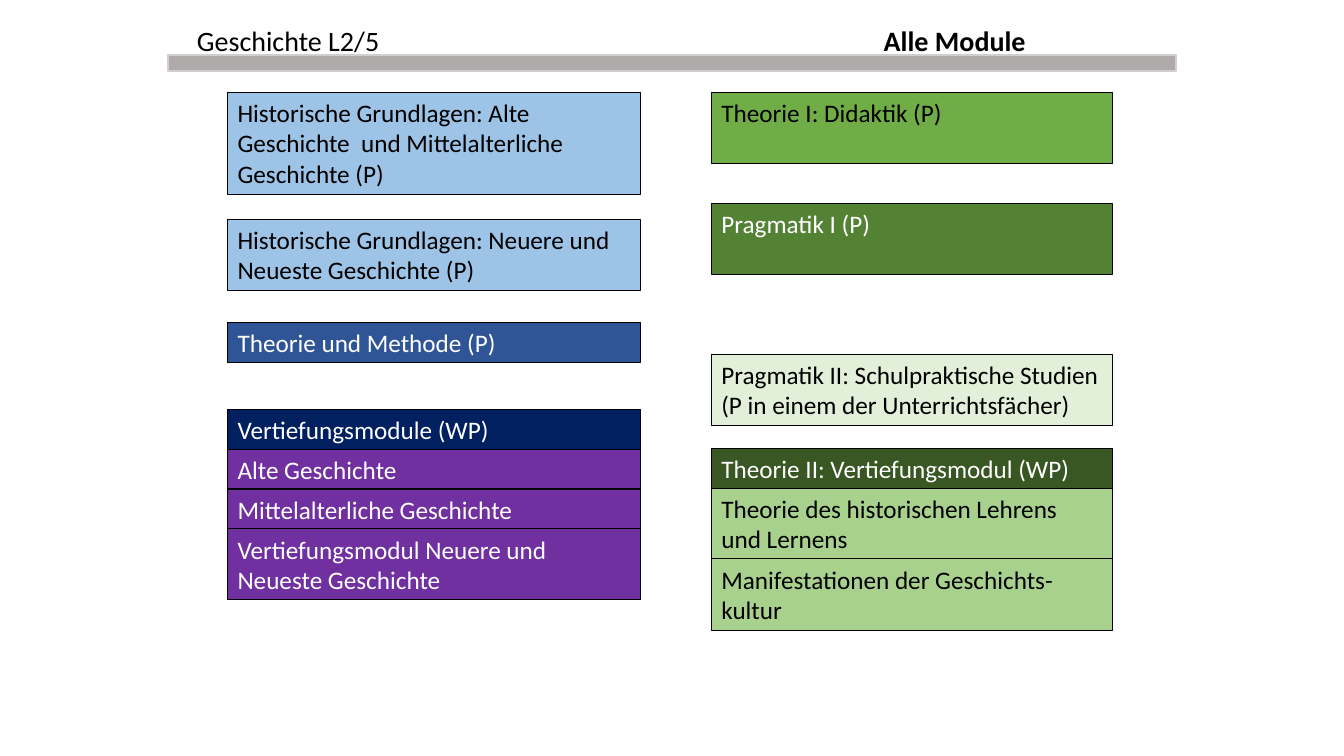
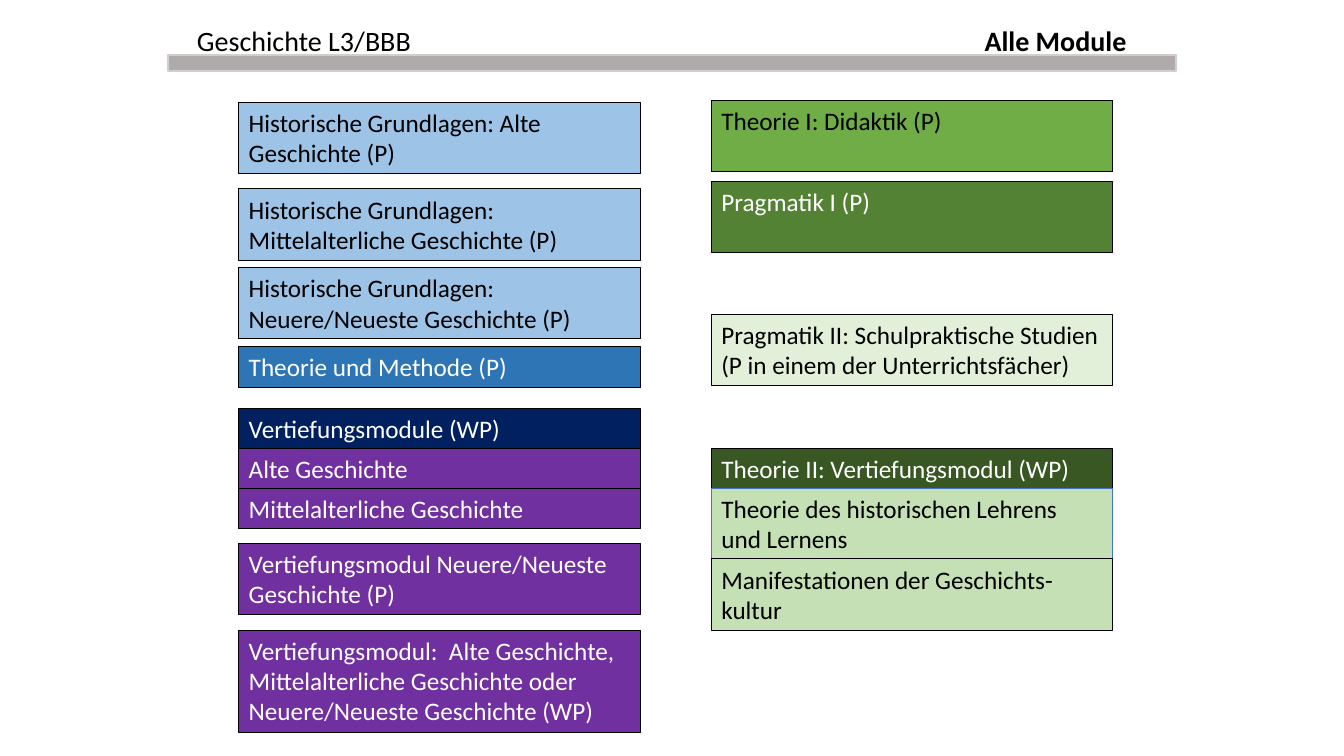
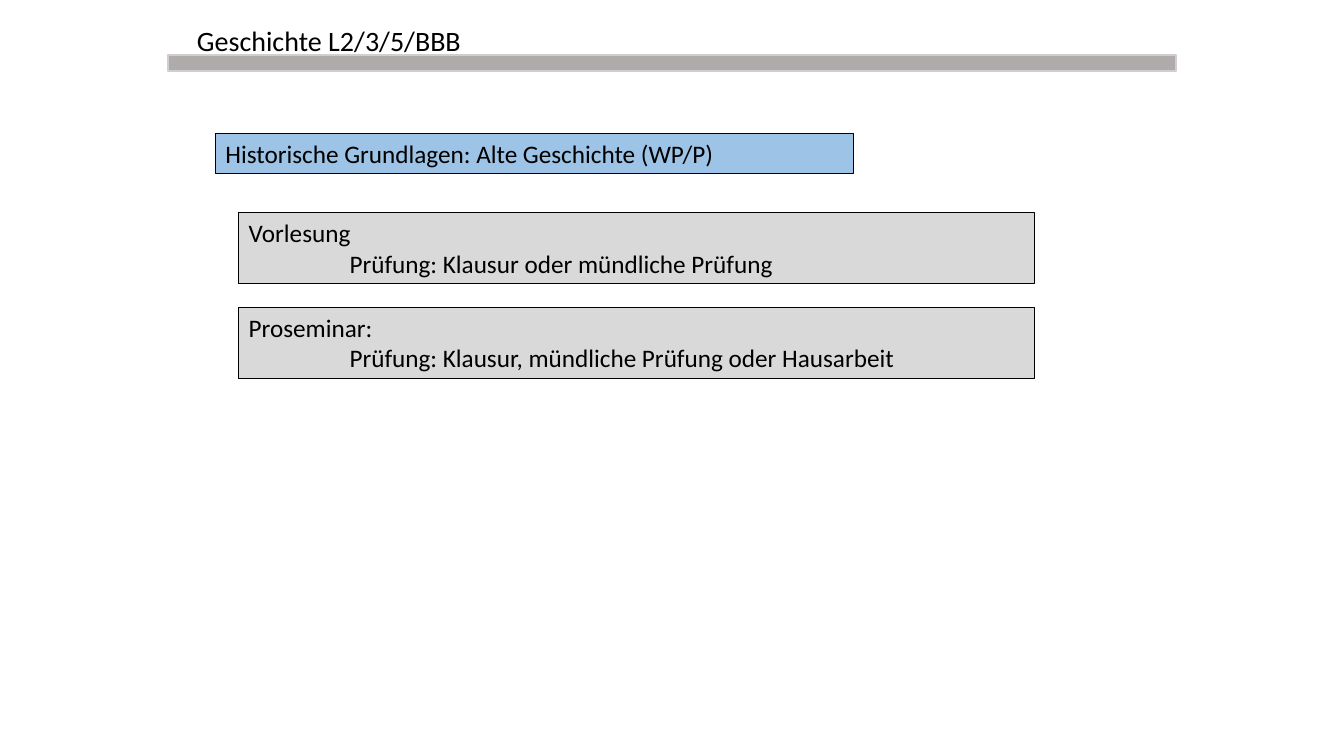
from lxml.etree import SubElement
from pptx import Presentation
from pptx.dml.color import RGBColor
from pptx.enum.shapes import MSO_SHAPE
from pptx.enum.text import MSO_ANCHOR, PP_ALIGN
from pptx.oxml.ns import qn
from pptx.util import Pt

FONT = "Calibri"
BLACK = RGBColor(0x00, 0x00, 0x00)
WHITE = RGBColor(0xFF, 0xFF, 0xFF)
BAR = RGBColor(0xAF, 0xAB, 0xAB)
BAR_EDGE = RGBColor(0xD0, 0xCE, 0xCE)
LIGHT_BLUE = RGBColor(0x9D, 0xC3, 0xE6)
MID_BLUE = RGBColor(0x2E, 0x75, 0xB6)
DEEP_BLUE = RGBColor(0x2F, 0x55, 0x97)
EDGE_BLUE = RGBColor(0x44, 0x72, 0xC4)
NAVY = RGBColor(0x00, 0x20, 0x60)
PURPLE = RGBColor(0x70, 0x30, 0xA0)
GREEN = RGBColor(0x70, 0xAD, 0x47)
DARK_GREEN = RGBColor(0x54, 0x82, 0x35)
FOREST = RGBColor(0x38, 0x57, 0x23)
SOFT_GREEN = RGBColor(0xA9, 0xD1, 0x8E)
PALE_GREEN = RGBColor(0xC5, 0xE0, 0xB4)
MINT = RGBColor(0xE2, 0xF0, 0xD9)
GREY = RGBColor(0xD9, 0xD9, 0xD9)
DARK_FILLS = {MID_BLUE, DEEP_BLUE, NAVY, PURPLE, DARK_GREEN, FOREST}

THEORY = ("Theorie I: Didaktik (P)", 2, GREEN)
PRAGMATICS = ("Pragmatik I (P)", 2, DARK_GREEN)
PRACTICE = ("Pragmatik II: Schulpraktische Studien (P in einem der Unterrichtsfächer)", 2, MINT)
METHOD = "Theorie und Methode (P)"
ADVANCED = [
    ("Vertiefungsmodule (WP)", 1, NAVY),
    ("Alte Geschichte", 1, PURPLE),
    ("Mittelalterliche Geschichte", 1, PURPLE),
]


def didactics(fill, edge=BLACK):
    return [
        ("Theorie II: Vertiefungsmodul (WP)", 1, FOREST),
        ("Theorie des historischen Lehrens\nund Lernens", 2, fill, edge),
        ("Manifestationen der Geschichts-\nkultur", 2, fill),
    ]


SLIDES = [
    {
        "title": "Geschichte L2/5", "tag": "Alle Module", "tab": 490.6,
        "columns": [
            (162.6, 294.8, [
                (66, [("Historische Grundlagen: Alte Geschichte  und Mittelalterliche Geschichte (P)",
                       3, LIGHT_BLUE)]),
                (156.8, [("Historische Grundlagen: Neuere und Neueste Geschichte (P)", 2, LIGHT_BLUE)]),
                (230.4, [(METHOD, 1, DEEP_BLUE)]),
                (292.3, ADVANCED + [("Vertiefungsmodul Neuere und Neueste Geschichte", 2, PURPLE)]),
            ]),
            (508.2, 286.6, [
                (66, [THEORY]),
                (145.4, [PRAGMATICS]),
                (253.2, [PRACTICE]),
                (320.4, didactics(SOFT_GREEN)),
            ]),
        ],
    },
    {
        "title": "Geschichte L3/BBB", "tag": "Alle Module", "tab": 562.6,
        "columns": [
            (170.6, 286.6, [
                (73.2, [("Historische Grundlagen: Alte Geschichte (P)", 2, LIGHT_BLUE)]),
                (135, [("Historische Grundlagen: Mittelalterliche Geschichte (P)", 2, LIGHT_BLUE)]),
                (191.2, [("Historische Grundlagen: Neuere/Neueste Geschichte (P)", 2, LIGHT_BLUE)]),
                (247.6, [(METHOD, 1, MID_BLUE)]),
                (291.9, ADVANCED),
                (388.2, [("Vertiefungsmodul Neuere/Neueste Geschichte (P)", 2, PURPLE)]),
                (450.2, [("Vertiefungsmodul:  Alte Geschichte, Mittelalterliche Geschichte oder "
                          "Neuere/Neueste Geschichte (WP)", 3, PURPLE)]),
            ]),
            (508.2, 286.6, [
                (71.6, [THEORY]),
                (129.6, [PRAGMATICS]),
                (224.6, [PRACTICE]),
                (320.4, didactics(PALE_GREEN, EDGE_BLUE)),
            ]),
        ],
    },
    {
        "title": "Geschichte L2/3/5/BBB",
        "columns": [
            (153.9, 455.8, [
                (95.4, [("Historische Grundlagen: Alte Geschichte (WP/P)", 1, LIGHT_BLUE)]),
            ]),
            (170.6, 568.4, [
                (152, [("Vorlesung\n\tPrüfung: Klausur oder mündliche Prüfung", 2, GREY)]),
                (219.6, [("Proseminar:\n\tPrüfung: Klausur, mündliche Prüfung oder Hausarbeit", 2, GREY)]),
            ]),
        ],
    },
]

BAND_LEFT, BAND_WIDTH = 120, 720
LINE_HEIGHT, PADDING, OVERLAP = 21.9, 7, 0.4
MODULE_TAB = 72


def add_run(p, text, size=18, color=BLACK, bold=False):
    r = p.add_run()
    r.text = text
    r.font.name = FONT
    r.font.size = Pt(size)
    r.font.bold = bold
    r.font.color.rgb = color


def set_tab(p, pos):
    tabs = SubElement(p._p.get_or_add_pPr(), qn("a:tabLst"))
    SubElement(tabs, qn("a:tab"), pos=str(Pt(pos)), algn="l")


def add_rect(s, x, y, w, h, fill, edge=BLACK, weight=0.75):
    sp = s.shapes.add_shape(MSO_SHAPE.RECTANGLE, Pt(x), Pt(y), Pt(w), Pt(h))
    sp.shadow.inherit = False
    sp.fill.solid()
    sp.fill.fore_color.rgb = fill
    sp.line.color.rgb = edge
    sp.line.width = Pt(weight)
    return sp


def add_header(s, title, tag=None, tab=0):
    tf = s.shapes.add_textbox(Pt(BAND_LEFT), Pt(0), Pt(BAND_WIDTH), Pt(44.6)).text_frame
    tf.word_wrap = True
    tf.vertical_anchor = MSO_ANCHOR.BOTTOM
    tf.margin_left = Pt(20.7)
    p = tf.paragraphs[0]
    p.line_spacing = 0.9
    if tag:
        set_tab(p, tab)
        add_run(p, title + "\t", size=20)
        add_run(p, tag, size=20, bold=True)
    else:
        add_run(p, title, size=20)
    add_rect(s, BAND_LEFT, 39.4, BAND_WIDTH, 11.4, BAR, BAR_EDGE, 1)


def add_module(s, x, y, w, h, text, fill, edge=BLACK):
    tf = add_rect(s, x, y, w, h, fill, edge).text_frame
    tf.word_wrap = True
    tf.vertical_anchor = MSO_ANCHOR.TOP
    for i, line in enumerate(text.split("\n")):
        p = tf.add_paragraph() if i else tf.paragraphs[0]
        p.alignment = PP_ALIGN.LEFT
        if line.startswith("\t"):
            set_tab(p, MODULE_TAB)
        add_run(p, line, color=WHITE if fill in DARK_FILLS else BLACK)


def main():
    prs = Presentation()
    prs.slide_width, prs.slide_height = Pt(960), Pt(540)
    for page in SLIDES:
        s = prs.slides.add_slide(prs.slide_layouts[6])
        add_header(s, page["title"], page.get("tag"), page.get("tab", 0))
        for x, w, stacks in page["columns"]:
            for y, modules in stacks:
                for text, lines, *colors in modules:
                    h = PADDING + LINE_HEIGHT * lines
                    add_module(s, x, y, w, h, text, *colors)
                    y += h - OVERLAP
    prs.save("out.pptx")


if __name__ == "__main__":
    main()
